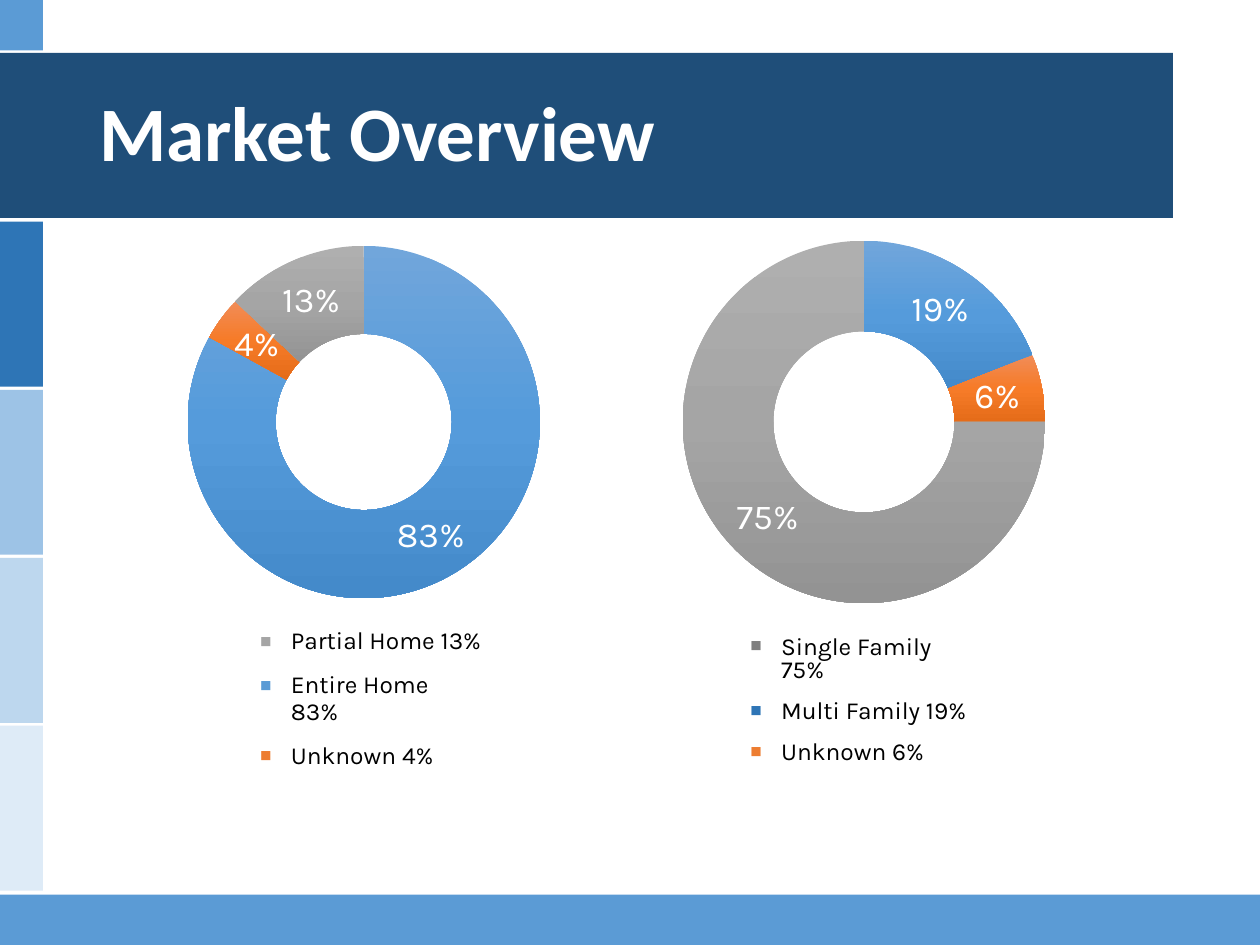
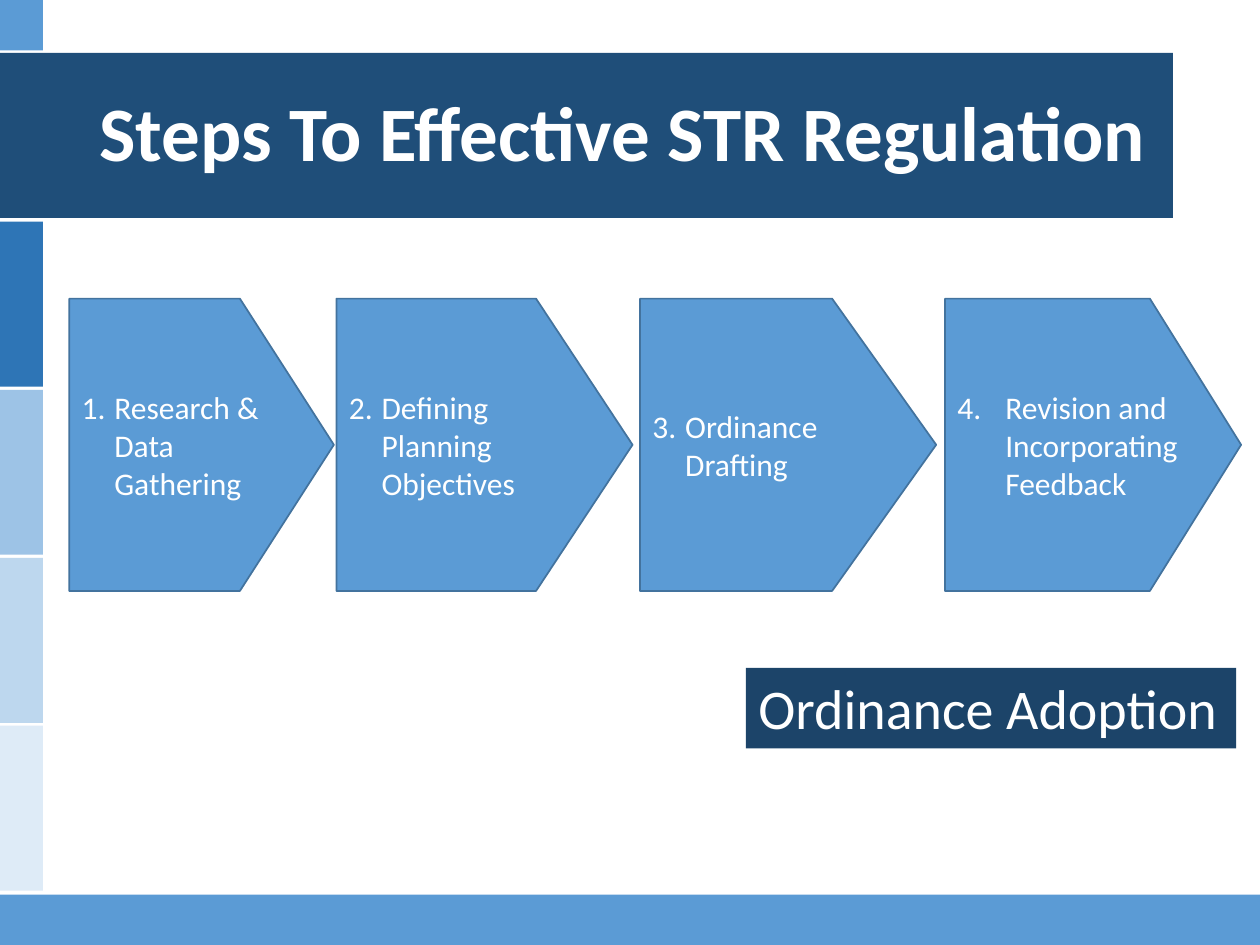
"""Build two slides on short-term rental regulation: market charts and process steps."""
from dataclasses import dataclass

import lxml.etree
import pptx
import pptx.chart.data
import pptx.dml.color
import pptx.enum.chart
import pptx.enum.shapes
import pptx.enum.text
import pptx.oxml
import pptx.oxml.ns
import pptx.util

Inches = pptx.util.Inches
Pt = pptx.util.Pt
qn = pptx.oxml.ns.qn
ShapeType = pptx.enum.shapes.MSO_SHAPE
Anchor = pptx.enum.text.MSO_ANCHOR

NAVY, BLUE, DEEP_BLUE, ORANGE = "1F4E79", "5B9BD5", "2E75B6", "ED7D31"
WHITE, BLACK = "FFFFFF", "000000"
HEADING_FONT, CHART_FONT = "Calibri", "Karla"
SLICE_GRADIENTS = [
    ("71A6DB", "559BDB", "448ACA"),
    ("F18C57", "F67B28", "E56C19"),
    ("AFAFAF", "A5A5A5", "939393"),
]


@dataclass
class Box:
    left: float
    top: float
    width: float
    height: float

    def lengths(self) -> list:
        """Return the box as slide lengths."""
        return [Inches(n) for n in (self.left, self.top, self.width, self.height)]


@dataclass
class Band:
    box: Box
    color: str


@dataclass
class LegendEntry:
    text: str
    color: str


@dataclass
class MarketChart:
    box: Box
    plot_top: float
    shares: list[int]
    legend_box: Box
    legend: list[LegendEntry]
    line_spacing: float


@dataclass
class Step:
    text: str
    left: float
    width: float
    point: float
    indent: float = 0.26


BANDS = [
    Band(Box(0, 0.42, 9.31, 1.31), NAVY),
    Band(Box(0, 7.1, 10, 0.41), BLUE),
    Band(Box(0, -0.01, 0.34, 0.41), BLUE),
] + [
    Band(Box(0, 1.76 + row * 4 / 3, 0.34, 1.31), color)
    for row, color in enumerate([DEEP_BLUE, "9DC3E6", "BDD7EE", "DEEBF7"])
]

MARKET_CHARTS = [
    MarketChart(
        Box(-0.21, 0.85, 6.2, 4.01), 0.274, [83, 4, 13], Box(1.96, 4.94, 1.96, 1.05),
        [LegendEntry("Partial Home 13%", "A5A5A5"),
         LegendEntry("Entire Home 83%", BLUE),
         LegendEntry("Unknown 4%", ORANGE)], 0.9),
    MarketChart(
        Box(3.67, 1.04, 6.38, 3.82), 0.228, [19, 6, 75], Box(5.85, 5, 2.01, 0.94),
        [LegendEntry("Single Family 75%", "808080"),
         LegendEntry("Multi Family 19%", DEEP_BLUE),
         LegendEntry("Unknown 6%", ORANGE)], 0.8),
]

STEPS = [
    Step("Research & Data Gathering", 0.55, 2.1, 0.355),
    Step("Defining Planning Objectives", 2.67, 2.35, 0.33),
    Step("Ordinance Drafting", 5.08, 2.35, 0.356),
    Step("Revision and Incorporating Feedback", 7.5, 2.35, 0.312, 0.38),
]


def rgb(color: str) -> pptx.dml.color.RGBColor:
    """Turn a hex string into a colour."""
    return pptx.dml.color.RGBColor.from_string(color)


def style_font(font, size: float, color: str, name: str = HEADING_FONT, bold: bool = False) -> None:
    """Set the look of a font."""
    font.size, font.name, font.bold = Pt(size), name, bold
    font.color.rgb = rgb(color)


def add_block(slide, box: Box, color: str, kind=ShapeType.RECTANGLE, line: str | None = None):
    """Add a flat filled shape."""
    shape = slide.shapes.add_shape(kind, *box.lengths())
    shape.shadow.inherit = False
    shape.fill.solid()
    shape.fill.fore_color.rgb = rgb(color)
    if line:
        shape.line.color.rgb = rgb(line)
        shape.line.width = Pt(1)
    else:
        shape.line.fill.background()
    return shape


def write_text(shape, text: str, size: float, bold: bool = False):
    """Put one left-aligned white paragraph into a shape."""
    shape.text_frame.word_wrap = True
    shape.text_frame.text = text
    paragraph = shape.text_frame.paragraphs[0]
    paragraph.alignment = pptx.enum.text.PP_ALIGN.LEFT
    style_font(paragraph.runs[0].font, size, WHITE, bold=bold)
    return paragraph


def add_marker(paragraph, indent: float, *markers: tuple[str, dict]) -> None:
    """Give a paragraph a hanging indent and its bullet elements."""
    properties = paragraph._p.get_or_add_pPr()
    properties.set("marL", str(Inches(indent)))
    properties.set("indent", str(-Inches(indent)))
    for tag, attributes in markers:
        lxml.etree.SubElement(properties, qn(tag), attributes)


def add_titled_slide(presentation, title: str):
    """Add a blank slide with the shared bands and a title."""
    slide = presentation.slides.add_slide(presentation.slide_layouts[6])
    for band in BANDS:
        add_block(slide, band.box, band.color)
    shape = slide.shapes.add_textbox(*Box(0.69, 0.42, 8.62, 1.32).lengths())
    paragraph = write_text(shape, title, 44, bold=True)
    paragraph.line_spacing = 0.9
    shape.text_frame.vertical_anchor = Anchor.MIDDLE
    return slide


def fill_slice(point, colors: tuple[str, ...], chart) -> None:
    """Fill a slice with a downward gradient."""
    point.format.line.fill.background()
    point.format.fill.gradient()
    point.format.fill.gradient_angle = 270
    stops = list(chart.element.iter(qn("a:gsLst")))[-1]
    for stop in list(stops):
        stops.remove(stop)
    for index, color in enumerate(colors):
        stop = lxml.etree.SubElement(stops, qn("a:gs"), pos=str(index * 50000))
        lxml.etree.SubElement(stop, qn("a:srgbClr"), val=color)


def place_plot(chart, top: float) -> None:
    """Fix the inner plot area and clear the chart background."""
    plot_area = next(chart.element.iter(qn("c:plotArea")))
    for layout in plot_area.findall(qn("c:layout")):
        plot_area.remove(layout)
    layout = lxml.etree.Element(qn("c:layout"))
    manual = lxml.etree.SubElement(layout, qn("c:manualLayout"))
    settings = {"layoutTarget": "inner", "xMode": "edge", "yMode": "edge",
                "x": 0.274, "y": top, "w": 0.451, "h": 0.753}
    for tag, value in settings.items():
        lxml.etree.SubElement(manual, qn(f"c:{tag}"), val=str(value))
    plot_area.insert(0, layout)
    background = lxml.etree.Element(qn("c:spPr"))
    lxml.etree.SubElement(background, qn("a:noFill"))
    outline = lxml.etree.SubElement(background, qn("a:ln"))
    lxml.etree.SubElement(outline, qn("a:noFill"))
    chart.element.find(qn("c:chart")).addnext(background)


def add_doughnut(slide, market: MarketChart) -> None:
    """Add a doughnut chart with percentage labels."""
    data = pptx.chart.data.CategoryChartData()
    data.categories = ["1", "2", "3"]
    data.add_series("Series 1", market.shares)
    chart = slide.shapes.add_chart(
        pptx.enum.chart.XL_CHART_TYPE.DOUGHNUT, *market.box.lengths(), data).chart
    chart.has_title = chart.has_legend = False
    style_font(chart.font, 10, BLACK)
    plot = chart.plots[0]
    plot.vary_by_categories = True
    plot.has_data_labels = True
    labels = plot.data_labels
    labels.show_value, labels.show_percentage = False, True
    style_font(labels.font, 20, WHITE, CHART_FONT)
    for index, colors in enumerate(SLICE_GRADIENTS):
        fill_slice(plot.series[0].points[index], colors, chart)
    place_plot(chart, market.plot_top)


def add_legend(slide, market: MarketChart) -> None:
    """Add the bulleted key under a chart."""
    frame = slide.shapes.add_textbox(*market.legend_box.lengths()).text_frame
    frame.word_wrap = True
    frame.text = "\n".join(entry.text for entry in market.legend)
    for index, (paragraph, entry) in enumerate(zip(frame.paragraphs, market.legend)):
        paragraph.line_spacing = market.line_spacing
        paragraph.space_before = Pt(10 if index else 0)
        add_marker(paragraph, 0.25, ("a:buClr", {}), ("a:buSzPct", {"val": "150000"}),
                   ("a:buFont", {"typeface": "Arial"}), ("a:buChar", {"char": "▪"}))
        bullet_color = paragraph._p.pPr.find(qn("a:buClr"))
        lxml.etree.SubElement(bullet_color, qn("a:srgbClr"), val=entry.color)
        style_font(paragraph.runs[0].font, 14, BLACK, CHART_FONT)


def add_step(slide, number: int, step: Step) -> None:
    """Add one numbered arrow of the process."""
    shape = add_block(slide, Box(step.left, 2.37, step.width, 2.32), BLUE,
                      ShapeType.PENTAGON, "43739E")
    shape.adjustments[0] = step.point
    shape.text_frame.vertical_anchor = Anchor.MIDDLE
    paragraph = write_text(shape, step.text, 18)
    add_marker(paragraph, step.indent, ("a:buFont", {"typeface": "+mj-lt"}),
               ("a:buAutoNum", {"type": "arabicPeriod", "startAt": str(number)}))


def build_market_slide(presentation) -> None:
    """Build the slide of market shares."""
    slide = add_titled_slide(presentation, "Market Overview")
    for market in MARKET_CHARTS:
        add_legend(slide, market)
    for market in MARKET_CHARTS:
        add_doughnut(slide, market)


def build_steps_slide(presentation) -> None:
    """Build the slide of regulation steps."""
    slide = add_titled_slide(presentation, "Steps To Effective STR Regulation")
    for number, step in enumerate(STEPS, start=1):
        add_step(slide, number, step)
    adoption = add_block(slide, Box(5.92, 5.3, 3.89, 0.64), "1C4469")
    write_text(adoption, "Ordinance Adoption", 32)
    adoption.text_frame.vertical_anchor = Anchor.TOP
    adoption.text_frame.word_wrap = False
    adoption.text_frame.auto_size = pptx.enum.text.MSO_AUTO_SIZE.SHAPE_TO_FIT_TEXT


def main() -> None:
    """Build and save the presentation."""
    presentation = pptx.Presentation()
    presentation.slide_width, presentation.slide_height = Inches(10), Inches(7.5)
    build_market_slide(presentation)
    build_steps_slide(presentation)
    presentation.save("out.pptx")


if __name__ == "__main__":
    main()
